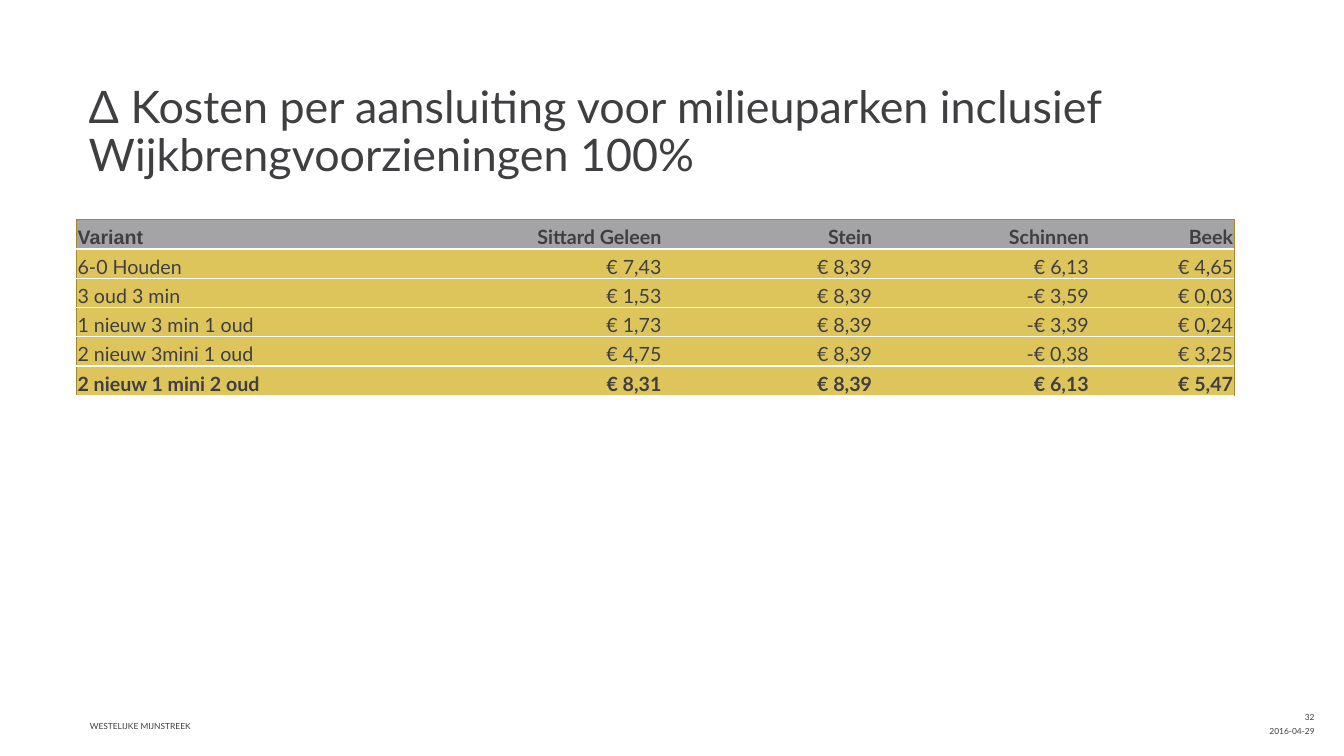
from dataclasses import dataclass

from lxml.etree import SubElement as Sub
from pptx import Presentation
from pptx.dml.color import RGBColor as RGB
from pptx.enum.text import MSO_ANCHOR as Anchor, MSO_AUTO_SIZE as Auto, PP_ALIGN as Align
from pptx.oxml.ns import qn
from pptx.util import Inches, Pt

HUES = {"ink": "3F3F42", "head": "A4A4A6", "body": "DEC55B",
        "edge": "A48730", "rule": "FFFFFF"}
WIDE, HIGH = Inches(13.33), Inches(7.5)

# Table content and grid, in percent of the slide's size
ROWS = [
    ("Variant", "Sittard Geleen", "Stein", "Schinnen", "Beek"),
    ("6-0 Houden", "€ 7,43", "€ 8,39", "€ 6,13", "€ 4,65"),
    ("3 oud 3 min", "€ 1,53", "€ 8,39", "-€ 3,59", "€ 0,03"),
    ("1 nieuw 3 min 1 oud", "€ 1,73", "€ 8,39", "-€ 3,39", "€ 0,24"),
    ("2 nieuw 3mini 1 oud", "€ 4,75", "€ 8,39", "-€ 0,38", "€ 3,25"),
    ("2 nieuw 1 mini 2 oud", "€ 8,31", "€ 8,39", "€ 6,13", "€ 5,47"),
]
COLS = (23.86, 19.73, 15.68, 16.13, 10.73)
ROW = 3.87


@dataclass
class Box:
    """A frame in percent of the slide's width and height."""
    left: float
    top: float
    width: float
    height: float

    def place(self) -> tuple[int, int, int, int]:
        return across(self.left), down(self.top), across(self.width), down(self.height)


@dataclass
class Note:
    text: str
    box: Box
    align: Align


NOTES = [
    Note("2016-04-29", Box(75.32, 95.73, 22.5, 1.6), Align.RIGHT),
    Note("WESTELIJKE MIJNSTREEK", Box(6.68, 93.2, 15.75, 3.47), Align.LEFT),
    Note("32", Box(75.32, 93.2, 22.5, 2.27), Align.RIGHT),
]


def across(share: float) -> int:
    return round(WIDE * share / 100)


def down(share: float) -> int:
    return round(HIGH * share / 100)


def write(frame, text: str, size: float, font: str = "Lato", bold: bool = False,
          align: Align = Align.LEFT, space: float = 1) -> None:
    frame.word_wrap = True
    para = frame.paragraphs[0]
    para.alignment, para.line_spacing = align, space
    run = para.add_run()
    run.text = text
    run.font.name, run.font.size, run.font.bold = font, Pt(size), bold
    run.font.color.rgb = RGB.from_string(HUES["ink"])


def settle(frame) -> None:
    """Drop the margins and rest the text on the bottom edge."""
    frame.auto_size = Auto.NONE
    frame.vertical_anchor = Anchor.BOTTOM
    frame.margin_left = frame.margin_right = frame.margin_top = frame.margin_bottom = 0


def border(cell, side: str, hue: str | None, width: float = 1) -> None:
    line = Sub(cell._tc.get_or_add_tcPr(), qn(f"a:ln{side}"), w=str(Pt(width)))
    if hue:
        fill = Sub(line, qn("a:solidFill"))
        Sub(fill, qn("a:srgbClr"), val=HUES[hue])
    else:
        Sub(line, qn("a:noFill"))


def draw_cell(cell, text: str, row: int, col: int) -> None:
    last = len(COLS) - 1
    border(cell, "L", "edge" if col == 0 else None, 0.5)
    border(cell, "R", "edge" if col == last else None, 0.5)
    border(cell, "T", "rule" if row else "edge", 1 if row else 0.5)
    border(cell, "B", "rule")
    cell.fill.solid()
    cell.fill.fore_color.rgb = RGB.from_string(HUES["body" if row else "head"])
    cell.vertical_anchor = Anchor.BOTTOM
    cell.margin_left = cell.margin_right = cell.margin_top = Inches(0.01)
    cell.margin_bottom = 0
    write(cell.text_frame, text, 14, font="Lato" if row or col else "Arial",
          bold=row in (0, len(ROWS) - 1), align=Align.RIGHT if col else Align.LEFT)


def draw_table(slide) -> None:
    box = Box(5.7, 29.07, sum(COLS), ROW * len(ROWS))
    table = slide.shapes.add_table(len(ROWS), len(COLS), *box.place()).table
    table.first_row = table.horz_banding = False
    for col, share in zip(table.columns, COLS):
        col.width = across(share)
    for r, texts in enumerate(ROWS):
        table.rows[r].height = down(ROW)
        for c, text in enumerate(texts):
            draw_cell(table.cell(r, c), text, r, c)


def main() -> None:
    deck = Presentation()
    deck.slide_width, deck.slide_height = WIDE, HIGH
    slide = deck.slides.add_slide(deck.slide_layouts[5])

    # Title
    title = slide.shapes.title
    title.left, title.top, title.width, title.height = Box(6.6, 11.07, 91.3, 12.93).place()
    settle(title.text_frame)
    write(title.text_frame, "Δ Kosten per aansluiting voor milieuparken inclusief "
          "Wijkbrengvoorzieningen 100%", 32, space=0.9)

    # Footer
    for note in NOTES:
        frame = slide.shapes.add_textbox(*note.box.place()).text_frame
        settle(frame)
        write(frame, note.text, 6, align=note.align)

    # Costs
    draw_table(slide)
    deck.save("out.pptx")


if __name__ == "__main__":
    main()
